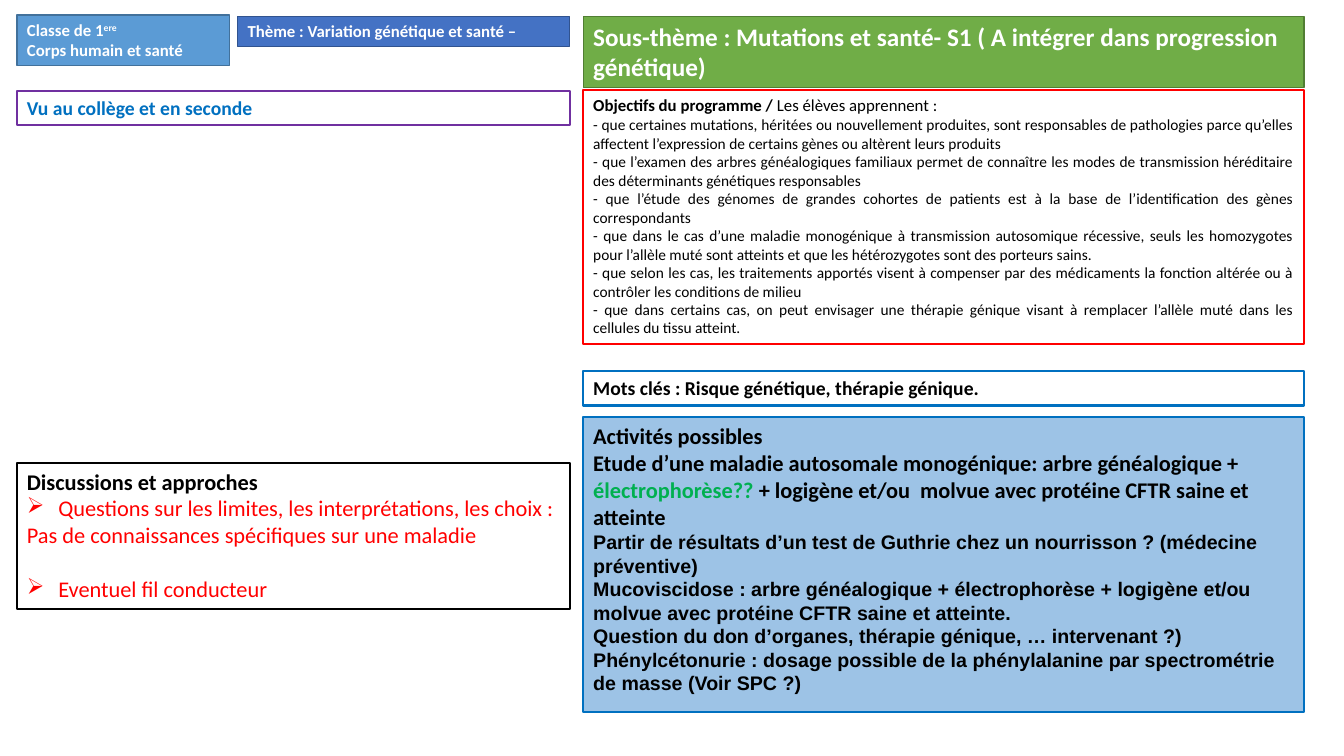
from lxml import etree
from pptx import Presentation
from pptx import util as u
from pptx.dml.color import RGBColor
from pptx.enum import shapes, text
from pptx.oxml import ns

WHITE = RGBColor(0xFF, 0xFF, 0xFF)
BLACK = RGBColor(0x00, 0x00, 0x00)
RED = RGBColor(0xFF, 0x00, 0x00)
GREEN = RGBColor(0x00, 0xB0, 0x50)
BLUE = RGBColor(0x00, 0x70, 0xC0)
PURPLE = RGBColor(0x70, 0x30, 0xA0)
CLASS_FILL = RGBColor(0x5B, 0x9B, 0xD5)
CLASS_EDGE = RGBColor(0x42, 0x71, 0x9B)
THEME_FILL = RGBColor(0x44, 0x72, 0xC4)
THEME_EDGE = RGBColor(0x31, 0x53, 0x8F)
TOPIC_FILL = RGBColor(0x70, 0xAD, 0x47)
TOPIC_EDGE = RGBColor(0x51, 0x7E, 0x33)
ACTIVITY_FILL = RGBColor(0x9D, 0xC3, 0xE6)

LEFT, LEFT_WIDTH = 0.43, 13.94
RIGHT, RIGHT_WIDTH = 14.7, 18.16
JUSTIFY = text.PP_ALIGN.JUSTIFY

OBJECTIVES = [
    "- que certaines mutations, héritées ou nouvellement produites, sont responsables de pathologies "
    "parce qu’elles affectent l’expression de certains gènes ou altèrent leurs produits",
    "- que l’examen des arbres généalogiques familiaux permet de connaître les modes de transmission "
    "héréditaire des déterminants génétiques responsables",
    "- que l’étude des génomes de grandes cohortes de patients est à la base de l’identification "
    "des gènes correspondants",
    "- que dans le cas d’une maladie monogénique à transmission autosomique récessive, seuls les "
    "homozygotes pour l’allèle muté sont atteints et que les hétérozygotes sont des porteurs sains.",
    "- que selon les cas, les traitements apportés visent à compenser par des médicaments la fonction "
    "altérée ou à contrôler les conditions de milieu",
    "- que dans certains cas, on peut envisager une thérapie génique visant à remplacer l’allèle muté "
    "dans les cellules du tissu atteint.",
]
ACTIVITIES = [
    "Partir de résultats d’un test de Guthrie chez un nourrisson ? (médecine préventive)",
    "Mucoviscidose : arbre généalogique + électrophorèse + logigène et/ou molvue avec protéine "
    "CFTR saine et atteinte.",
    "Question du don d’organes, thérapie génique, … intervenant ?)",
    "Phénylcétonurie : dosage possible de la phénylalanine par spectrométrie de masse (Voir SPC ?)",
]


def add_box(page, left, top, width, height, edge, fill=None, weight=1.5):
    box = page.shapes.add_shape(
        shapes.MSO_SHAPE.RECTANGLE, u.Cm(left), u.Cm(top), u.Cm(width), u.Cm(height))
    box.shadow.inherit = False
    if fill is None:
        box.fill.background()
    else:
        box.fill.solid()
        box.fill.fore_color.rgb = fill
    box.line.color.rgb = edge
    box.line.width = u.Pt(weight)
    box.text_frame.word_wrap = True
    box.text_frame.vertical_anchor = text.MSO_ANCHOR.TOP
    return box


def add_para(box, wording="", align=text.PP_ALIGN.LEFT, **look):
    frame = box.text_frame
    para = frame.paragraphs[0]
    if para.runs:
        para = frame.add_paragraph()
    para.alignment = align
    add_span(para, wording, **look)
    return para


def add_span(para, wording, size=12, color=BLACK, bold=True, name="Calibri"):
    span = para.add_run()
    span.text = wording
    span.font.color.rgb = color
    for key, value in {"size": u.Pt(size), "bold": bold, "name": name}.items():
        setattr(span.font, key, value)
    return span


def raise_span(span):
    span._r.get_or_add_rPr().set("baseline", "30000")


def add_bullet(para, color):
    props = para._p.get_or_add_pPr()
    indent = u.Cm(0.79)
    props.set("marL", str(indent))
    props.set("indent", str(-indent))
    tint = etree.SubElement(props, ns.qn("a:buClr"))
    etree.SubElement(tint, ns.qn("a:srgbClr")).set("val", str(color))
    face = etree.SubElement(props, ns.qn("a:buFont"))
    face.set("typeface", "Wingdings")
    face.set("charset", "2")
    etree.SubElement(props, ns.qn("a:buChar")).set("char", "Ø")


def add_headers(page):
    box = add_box(page, LEFT, 0.38, 5.36, 1.27, CLASS_EDGE, CLASS_FILL, 1)
    para = add_para(box, "Classe de 1", color=WHITE)
    raise_span(add_span(para, "ere", color=WHITE))
    add_para(box, "Corps humain et santé", color=WHITE)

    box = add_box(page, 5.99, 0.41, 8.36, 0.76, THEME_EDGE, THEME_FILL, 1)
    add_para(box, "Thème : Variation génétique et santé –", color=WHITE)

    box = add_box(page, RIGHT, 0.41, RIGHT_WIDTH, 1.8, TOPIC_EDGE, TOPIC_FILL, 1)
    add_para(box, "Sous-thème : Mutations et santé- S1 ( A intégrer dans progression génétique)",
             size=18, color=WHITE)


def add_objectives(page):
    box = add_box(page, RIGHT, 2.27, RIGHT_WIDTH, 6.41, RED)
    para = add_para(box, "Objectifs du programme / ")
    add_span(para, "Les élèves apprennent :", bold=False)
    for objective in OBJECTIVES:
        add_para(box, objective, JUSTIFY, size=11, bold=False)


def add_discussion(page):
    box = add_box(page, LEFT, 11.66, LEFT_WIDTH, 3.68, BLACK)
    add_para(box, "Discussions et approches", size=16)
    look = {"align": JUSTIFY, "size": 16, "color": RED, "bold": False}
    add_bullet(add_para(
        box, "Questions sur les limites, les interprétations, les choix :", **look), RED)
    answer = add_para(box, "Pas de connaissances spécifiques sur une maladie", **look)
    answer.space_after = u.Pt(19.5)
    add_bullet(add_para(box, "Eventuel fil conducteur", **look), RED)


def add_activities(page):
    box = add_box(page, RIGHT, 10.52, RIGHT_WIDTH, 7.42, BLUE, ACTIVITY_FILL)
    add_para(box, "Activités possibles", JUSTIFY, size=16)
    para = add_para(
        box, "Etude d’une maladie autosomale monogénique: arbre généalogique + ", size=16)
    add_span(para, "électrophorèse?? ", size=16, color=GREEN)
    add_span(para, "+ logigène et/ou  molvue avec protéine CFTR saine et atteinte", size=16)
    for activity in ACTIVITIES:
        add_para(box, activity, size=14, name="Arial")


def main():
    deck = Presentation()
    deck.slide_width, deck.slide_height = u.Cm(33.87), u.Cm(19.05)
    page = deck.slides.add_slide(deck.slide_layouts[6])
    add_headers(page)
    add_objectives(page)
    box = add_box(page, LEFT, 2.3, LEFT_WIDTH, 0.86, PURPLE)
    add_para(box, "Vu au collège et en seconde", size=14, color=BLUE)
    add_discussion(page)
    add_activities(page)
    box = add_box(page, RIGHT, 9.36, RIGHT_WIDTH, 0.86, BLUE)
    add_para(box, "Mots clés : Risque génétique, thérapie génique.", size=14)
    deck.save("out.pptx")


if __name__ == "__main__":
    main()
